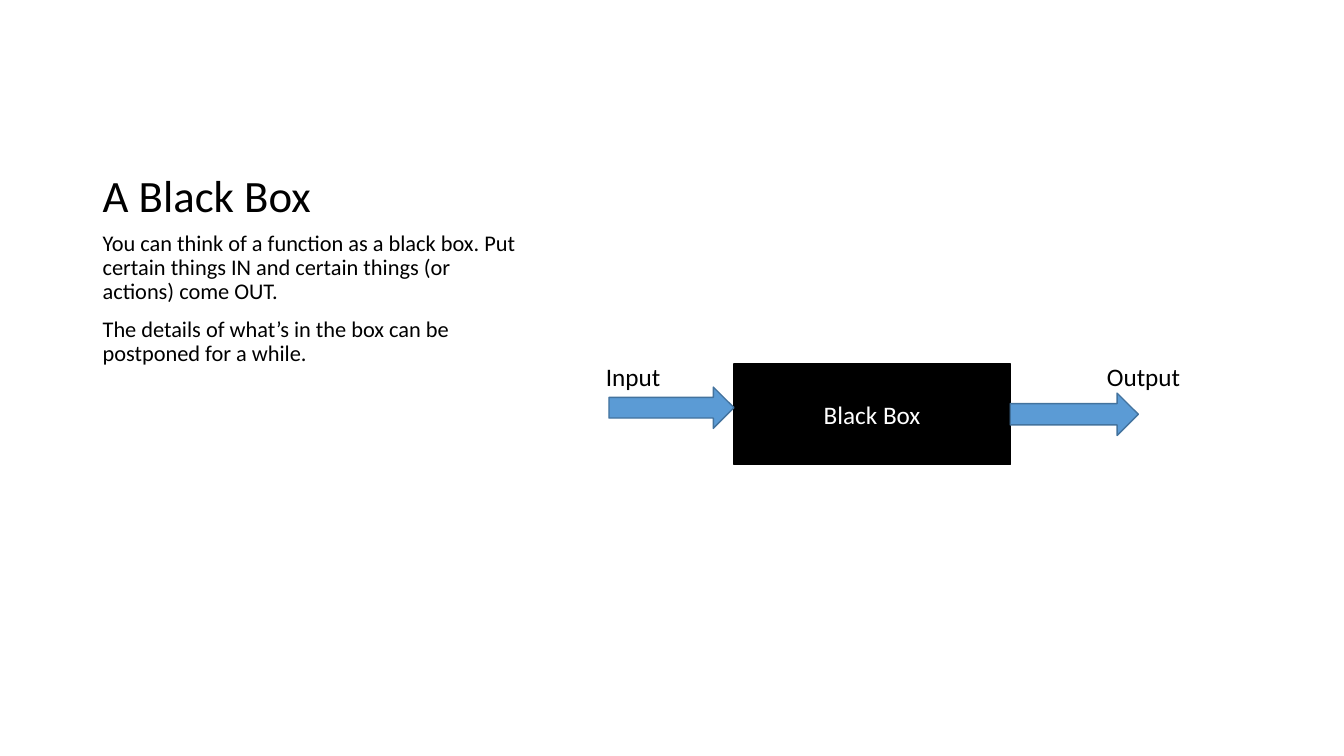
from dataclasses import dataclass

from pptx import Presentation
from pptx.dml.color import RGBColor
from pptx.enum.shapes import MSO_SHAPE as Shape
from pptx.enum.text import MSO_ANCHOR as Anchor, PP_ALIGN as Align
from pptx.util import Inches, Pt

# Content: boxes are left, top, width, height in inches
TITLE = "A Black Box"
BODY = [
    "You can think of a function as a black box. Put certain things IN "
    "and certain things (or actions) come OUT.",
    "The details of what’s in the box can be postponed for a while.",
]
BOX_TEXT = "Black Box"
BOX = (7.28, 3.61, 2.74, 1)
ARROWS = [(6.04, 3.84, 1.24, 0.41), (BOX[0] + BOX[2], 3.9, 1.27, 0.42)]
LABELS = [("Input", (5.91, 3.54, 0.75, 0.4)), ("Output", (10.88, 3.54, 0.94, 0.4))]
COLUMN_LEFT, COLUMN_WIDTH = 0.92, 4.3
TITLE_TOP, BODY_TOP, BODY_BOTTOM = 0.5, 2.25, 6.42


@dataclass(frozen=True)
class Theme:
    font: str = "Calibri"
    black: str = "000000"
    white: str = "FFFFFF"
    arrow_fill: str = "5B9BD5"
    arrow_line: str = "43739E"
    title_size: int = 32
    body_size: int = 16
    label_size: int = 18


THEME = Theme()


def color(value):
    return RGBColor.from_string(value)


def write(frame, lines, size, ink=THEME.black, spacing=None, before=None, align=None):
    for index, line in enumerate(lines):
        paragraph = frame.add_paragraph() if index else frame.paragraphs[0]
        paragraph.text = line
        paragraph.line_spacing = spacing
        paragraph.space_before = before
        paragraph.alignment = align
        font = paragraph.font
        font.name, font.size = THEME.font, Pt(size)
        font.color.rgb = color(ink)


def add_text(slide, box, lines, size, wrap=True, anchor=Anchor.TOP, **style):
    frame = slide.shapes.add_textbox(*map(Inches, box)).text_frame
    frame.word_wrap = wrap
    frame.vertical_anchor = anchor
    write(frame, lines, size, **style)


def add_shape(slide, kind, box, fill, line):
    shape = slide.shapes.add_shape(kind, *map(Inches, box))
    shape.shadow.inherit = False
    shape.fill.solid()
    shape.fill.fore_color.rgb = color(fill)
    shape.line.color.rgb = color(line)
    shape.line.width = Pt(1)
    return shape


def main():
    presentation = Presentation()
    presentation.slide_width, presentation.slide_height = Inches(13.33), Inches(7.5)
    slide = presentation.slides.add_slide(presentation.slide_layouts[6])

    # Title and explanation
    add_text(slide, (COLUMN_LEFT, TITLE_TOP, COLUMN_WIDTH, BODY_TOP - TITLE_TOP),
             [TITLE], THEME.title_size, anchor=Anchor.BOTTOM, spacing=0.9)
    add_text(slide, (COLUMN_LEFT, BODY_TOP, COLUMN_WIDTH, BODY_BOTTOM - BODY_TOP),
             BODY, THEME.body_size, spacing=0.9, before=Pt(10))

    # Black box
    black_box = add_shape(slide, Shape.RECTANGLE, BOX, THEME.black, THEME.black)
    black_box.text_frame.vertical_anchor = Anchor.MIDDLE
    write(black_box.text_frame, [BOX_TEXT], THEME.label_size, THEME.white,
          align=Align.CENTER)

    # Input and output arrows with their labels
    for arrow, (label, label_box) in zip(ARROWS, LABELS):
        add_shape(slide, Shape.RIGHT_ARROW, arrow, THEME.arrow_fill, THEME.arrow_line)
        add_text(slide, label_box, [label], THEME.label_size, wrap=False)

    presentation.save("out.pptx")


if __name__ == "__main__":
    main()
